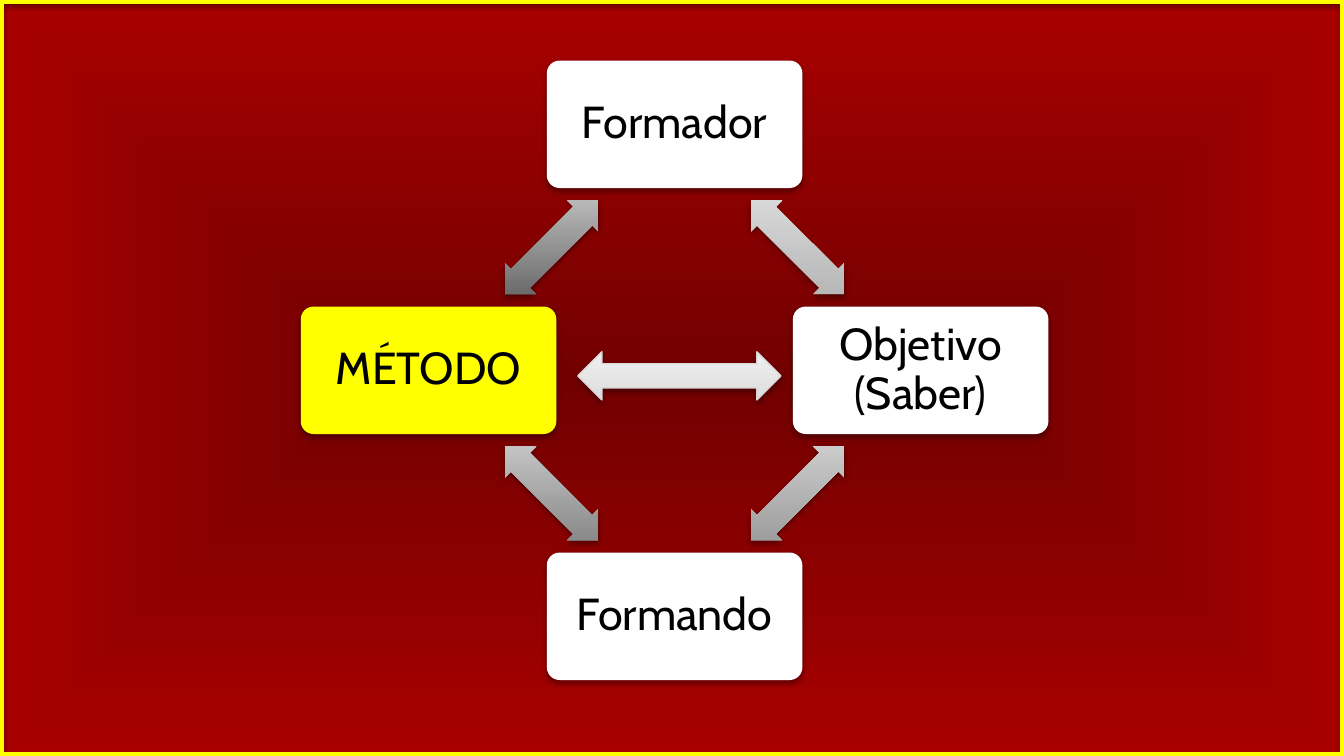
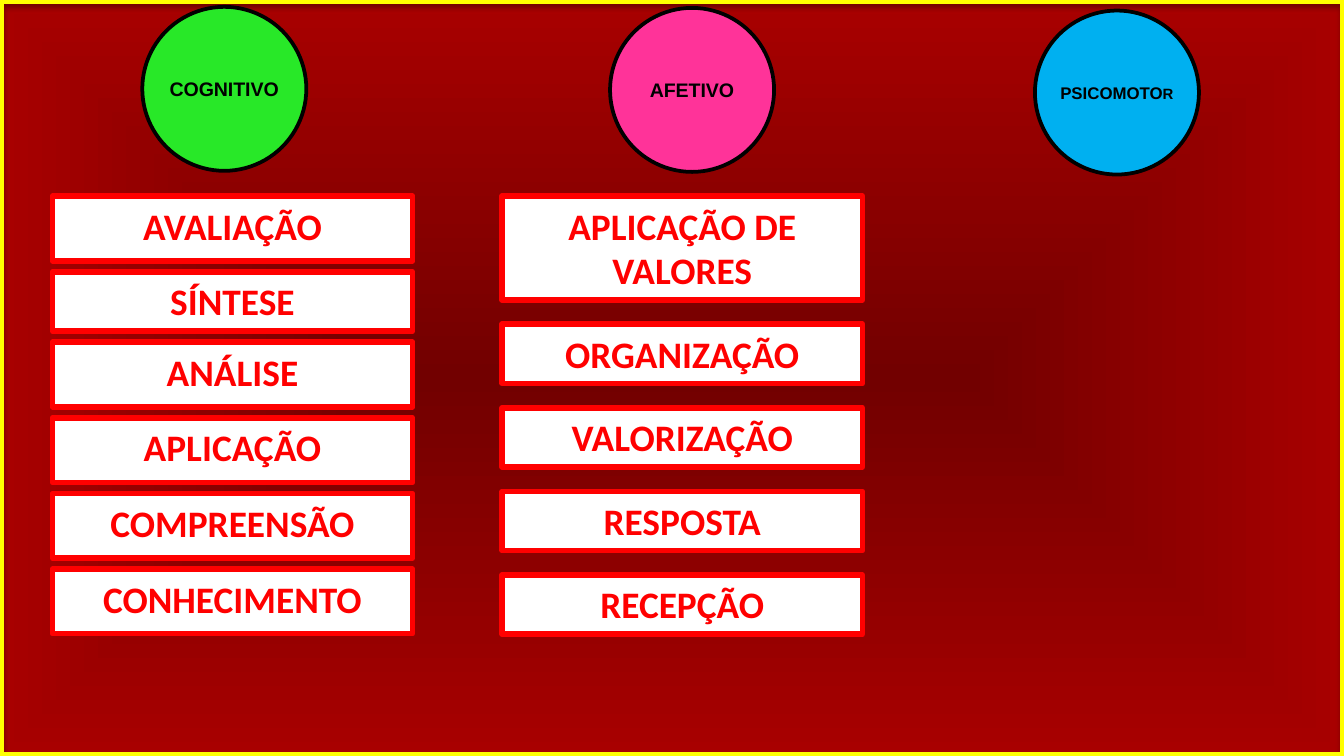
from dataclasses import dataclass

from lxml.etree import SubElement as Sub
from pptx import Presentation
from pptx.dml.color import RGBColor as Rgb
from pptx.enum.shapes import MSO_SHAPE as Kind
from pptx.enum.text import MSO_ANCHOR as Anchor, MSO_AUTO_SIZE as Fit, PP_ALIGN as Align
from pptx.oxml.ns import qn
from pptx.util import Cm, Pt


@dataclass(frozen=True)
class Theme:
    core: str = "720000"
    edge: str = "A80000"
    frame: str = "FFFF00"
    box: str = "FFFFFF"
    ink: str = "000000"
    red: str = "FF0000"
    rim: str = "D8D8D8"
    green: str = "28E828"
    pink: str = "FF3399"
    blue: str = "00B0F0"
    node: tuple = ("Cabin", 24, False)
    level: tuple = ("Calibri", 20, True)
    domain: tuple = ("Arial", 10.5, True)
    small: tuple = ("Arial", 9, True)
    tiny: tuple = ("Arial", 8, True)


theme = Theme()


def draw(page, kind, left, top, width, height, fill=None, line=None, weight=1, shade=False):
    shape = page.shapes.add_shape(kind, Cm(left), Cm(top), Cm(width), Cm(height))
    if fill is None:
        shape.fill.background()
    elif isinstance(fill, tuple):
        shape.fill.gradient()
        shape.fill.gradient_angle = 90
        for stop, tone in zip(shape.fill.gradient_stops, fill):
            stop.color.rgb = Rgb.from_string(tone)
        shape.element.spPr.find(qn("a:gradFill")).set("rotWithShape", "0")
    else:
        shape.fill.solid()
        shape.fill.fore_color.rgb = Rgb.from_string(fill)
    if line:
        shape.line.color.rgb = Rgb.from_string(line)
        shape.line.width = Pt(weight)
    else:
        shape.line.fill.background()
    shape.shadow.inherit = False
    if shade:
        glow = Sub(shape.element.spPr.find(qn("a:effectLst")), qn("a:outerShdw"),
                   blurRad="40000", dist="23000", dir="5400000", rotWithShape="0")
        tone = Sub(glow, qn("a:srgbClr"), val=theme.ink)
        Sub(tone, qn("a:alpha"), val="35000")
    return shape


def label(shape, text, style, color, inset, anchor=Anchor.MIDDLE, wrap=True):
    frame = shape.text_frame
    frame.text = text
    frame.word_wrap = wrap
    frame.vertical_anchor = anchor
    if inset is not None:
        frame.margin_left = frame.margin_right = Cm(inset)
        frame.margin_top = frame.margin_bottom = Cm(inset)
    para = frame.paragraphs[0]
    para.alignment = Align.CENTER
    font = para.runs[0].font
    font.name, size, font.bold = style
    font.size = Pt(size)
    font.color.rgb = Rgb.from_string(color)
    return para


deck = Presentation()
deck.slide_width, deck.slide_height = Cm(25.4), Cm(14.29)
master = deck.slide_master
blank = deck.slide_layouts[6]

back = master.background.fill
back.gradient()
for stop, tone in zip(back.gradient_stops, (theme.core, theme.edge)):
    stop.color.rgb = Rgb.from_string(tone)
grad = master.element.find(".//" + qn("a:gradFill"))
grad.remove(grad.find(qn("a:lin")))
focus = Sub(grad, qn("a:path"), path="shape")
Sub(focus, qn("a:fillToRect"), l="50000", t="50000", r="50000", b="50000")

for holder in list(blank.placeholders):
    blank.shapes.element.remove(holder.element)

cycle = deck.slides.add_slide(blank)
border = draw(cycle, Kind.RECTANGLE, 0, 0, 25.4, 14.29, None, theme.frame, 4.5, True)
blank.shapes.element.append(border.element)

mid_x, mid_y, reach = 12.75, 7, 4.65
box_w, box_h = 4.83, 2.41
bar_w, bar_h = 2.51, 0.84
nodes = [
    ("Formador", 0, -1, theme.box, ("B2B2B2", "DDDDDD")),
    ("Objetivo (Saber)", 1, 0, theme.box, ("969696", "D3D3D3")),
    ("Formando", 0, 1, theme.box, ("808080", "CDCDCD")),
    ("MÉTODO", -1, 0, theme.frame, ("5F5F5F", "C5C5C5")),
]
for turn, (text, dx, dy, fill, tones) in enumerate(nodes):
    node = draw(cycle, Kind.ROUNDED_RECTANGLE, mid_x + dx * reach - box_w / 2,
                mid_y + dy * reach - box_h / 2, box_w, box_h, fill, shade=True)
    node.adjustments[0] = 0.1
    para = label(node, text, theme.node, theme.ink, 0.25)
    para.line_spacing = 0.9
    para.space_after = Pt(8.4)
    next_x, next_y = nodes[(turn + 1) % len(nodes)][1:3]
    arrow = draw(cycle, Kind.LEFT_RIGHT_ARROW, mid_x + (dx + next_x) * reach / 2 - bar_w / 2,
                 mid_y + (dy + next_y) * reach / 2 - bar_h / 2, bar_w, bar_h, tones, shade=True)
    arrow.adjustments[0] = 0.6
    arrow.rotation = 45 + 90 * turn

draw(cycle, Kind.LEFT_RIGHT_ARROW, 10.92, 6.65, 3.84, 0.91,
     ("DDDDDD", "EFEFEF"), theme.rim, 0.75, True)

levels = deck.slides.add_slide(blank)
stacks = [
    (0.99, 0.21, [("AVALIAÇÃO", 1.22), ("SÍNTESE", 1.12), ("ANÁLISE", 1.22),
                  ("APLICAÇÃO", 1.22), ("COMPREENSÃO", 1.22), ("CONHECIMENTO", 1.22)]),
    (9.49, 0.46, [("APLICAÇÃO DE VALORES", 1.96), ("ORGANIZAÇÃO", 1.12),
                  ("VALORIZAÇÃO", 1.12), ("RESPOSTA", 1.12), ("RECEPÇÃO", 1.12)]),
]
for left, gap, steps in stacks:
    top = 3.71
    for text, height in steps:
        step = draw(levels, Kind.RECTANGLE, left, top, 6.81, height, theme.box, theme.red, 3)
        label(step, text, theme.level, theme.red, None, Anchor.TOP)
        step.text_frame.auto_size = Fit.SHAPE_TO_FIT_TEXT
        top += height + gap

domains = [
    ("COGNITIVO", "", 2.69, 0.13, theme.green, theme.domain),
    ("AFETIVO", "", 11.53, 0.15, theme.pink, theme.domain),
    ("PSICOMOTO", "R", 19.56, 0.2, theme.blue, theme.small),
]
for text, tail, left, top, fill, style in domains:
    disc = draw(levels, Kind.OVAL, left, top, 3.1, 3.1, fill, theme.ink, 2)
    para = label(disc, text, style, theme.ink, 0.03, wrap=False)
    if tail:
        run = para.add_run()
        run.text = tail
        run.font.name, size, run.font.bold = theme.tiny
        run.font.size = Pt(size)
        run.font.color.rgb = Rgb.from_string(theme.ink)

deck.save("out.pptx")
